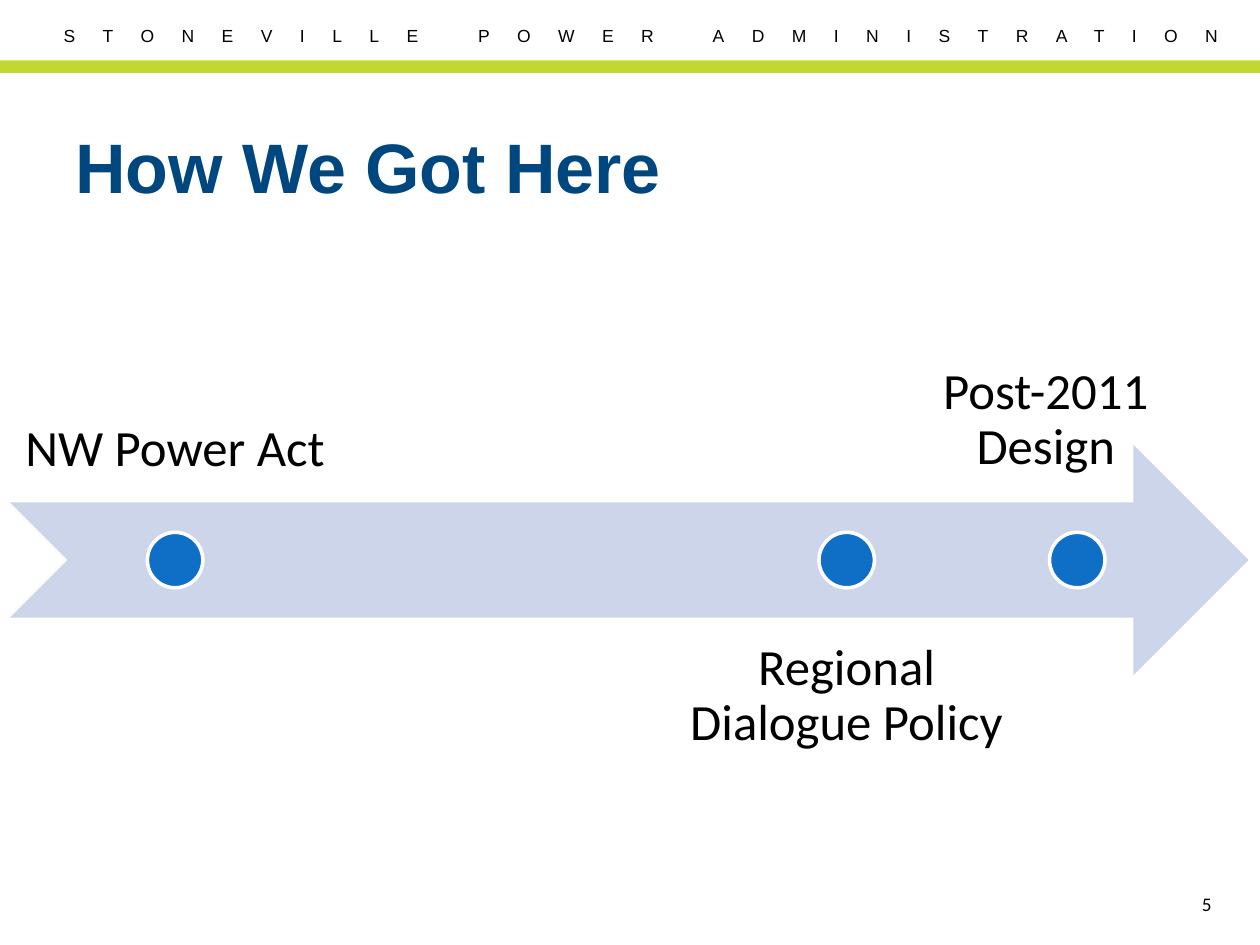
import pptx
import pptx.dml.color
import pptx.enum.shapes
import pptx.enum.text
import pptx.util

Inches = pptx.util.Inches
Pt = pptx.util.Pt
SHAPES = pptx.enum.shapes.MSO_SHAPE
ANCHOR = pptx.enum.text.MSO_ANCHOR
ALIGN = pptx.enum.text.PP_ALIGN


def color(value):
    return pptx.dml.color.RGBColor.from_string(value)


def add_text(slide, box, text, size, font="Calibri", fill="000000", bold=False,
             align=ALIGN.LEFT, anchor=ANCHOR.TOP, inset=None, wrap=True):
    frame = slide.shapes.add_textbox(*map(Inches, box)).text_frame
    frame.word_wrap = wrap
    frame.vertical_anchor = anchor
    if inset is not None:
        frame.margin_left = frame.margin_right = Inches(inset)
        frame.margin_top = frame.margin_bottom = Inches(inset)
    paragraph = frame.paragraphs[0]
    paragraph.text = text
    paragraph.alignment = align
    paragraph.font.name = font
    paragraph.font.size = Pt(size)
    paragraph.font.bold = bold
    paragraph.font.color.rgb = color(fill)
    return paragraph


def add_filled(slide, preset, box, fill, outline=None):
    shape = slide.shapes.add_shape(preset, *map(Inches, box))
    shape.shadow.inherit = False
    shape.fill.solid()
    shape.fill.fore_color.rgb = color(fill)
    if outline:
        shape.line.color.rgb = color(outline)
        shape.line.width = Pt(2)
    else:
        shape.line.fill.background()


def add_header(slide, box):
    left, top, width, height = box
    agency = add_text(slide, (left, top + 0.15, width + 0.17, 0.27),
                      "STONEVILLE POWER ADMINISTRATION", 10, "Arial",
                      align=ALIGN.CENTER)
    agency.runs[0].font._element.set("spc", "1570")
    add_filled(slide, SHAPES.RECTANGLE, (left, top + height - 0.1, width, 0.1), "C1D82F")


def add_timeline(slide, box, milestones):
    left, top, width, height = box
    middle = top + height / 2
    dot, label_width, label_height = 0.44, 2.95, 1.78
    add_filled(slide, SHAPES.NOTCHED_RIGHT_ARROW, box, "CCD5EA")
    for label, label_center, dot_center, above in milestones:
        label_top = middle - 0.44 - label_height if above else middle + 0.42
        title = add_text(slide,
                         (left + label_center - label_width / 2, label_top,
                          label_width, label_height),
                         label, 29, align=ALIGN.CENTER,
                         anchor=ANCHOR.BOTTOM if above else ANCHOR.TOP, inset=0.23)
        title.line_spacing = 0.9
        add_filled(slide, SHAPES.OVAL,
                   (left + dot_center - dot / 2, middle - dot / 2, dot, dot),
                   "0F6FC6", "FFFFFF")


def main():
    deck = pptx.Presentation()
    deck.slide_width, deck.slide_height = Inches(10), Inches(7.5)
    slide = deck.slides.add_slide(deck.slide_layouts[6])
    add_header(slide, (0, 0, 10, 0.58))
    add_text(slide, (0.5, 0.8, 9, 1.03), "How We Got Here", 40, "Arial", "00467F",
             bold=True, anchor=ANCHOR.MIDDLE)
    add_timeline(slide, (0.08, 3.53, 9.83, 1.83), [
        ("NW Power Act", 1.31, 1.31, True),
        ("Regional Dialogue Policy", 6.64, 6.64, False),
        ("Post-2011 Design", 8.22, 8.47, True),
    ])
    add_text(slide, (9.44, 7.03, 0.28, 0.29), "5", 11, wrap=False)
    deck.save("out.pptx")


if __name__ == "__main__":
    main()
